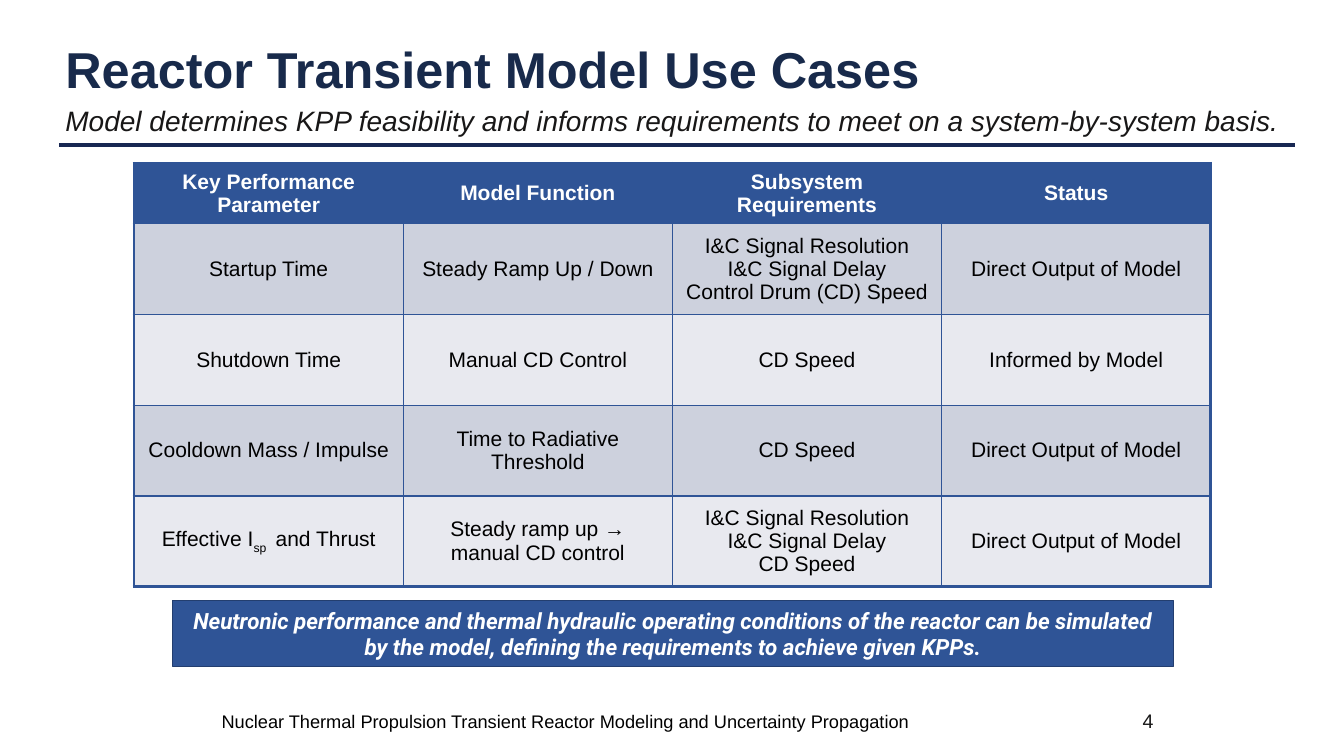
from lxml import etree
from pptx import Presentation
from pptx import util as u
from pptx.dml.color import RGBColor
from pptx.enum import shapes, text
from pptx.oxml import ns, parse_xml

PX = 9144  # EMU in one px, 100 px to the inch
NAVY, TITLE_NAVY, INK = "182752", "182A4B", "181717"
BLUE, BLUE_EDGE = "2F5496", "233E6F"
BANDS = ["CDD1DD", "E8E9EF"]
WHITE, BLACK = "FFFFFF", "000000"
LEFT, CENTER, RIGHT = text.PP_ALIGN.LEFT, text.PP_ALIGN.CENTER, text.PP_ALIGN.RIGHT
TOP, MIDDLE = text.MSO_ANCHOR.TOP, text.MSO_ANCHOR.MIDDLE
THIN, THICK = 1, 2.25

HEADINGS = ["Key Performance Parameter", "Model Function",
            "Subsystem Requirements", "Status"]
# A line is a string, or a list of (words, baseline shift) parts.
USE_CASES = [
    [["Startup Time"], ["Steady Ramp Up / Down"],
     ["I&C Signal Resolution", "I&C Signal Delay", "Control Drum (CD) Speed"],
     ["Direct Output of Model"]],
    [["Shutdown Time"], ["Manual CD Control"], ["CD Speed"], ["Informed by Model"]],
    [["Cooldown Mass / Impulse"], ["Time to Radiative", "Threshold"],
     ["CD Speed"], ["Direct Output of Model"]],
    [[[("Effective I", 0), ("sp ", -25), (" and Thrust", 0)]],
     ["Steady ramp up → manual CD control"],
     ["I&C Signal Resolution", "I&C Signal Delay", "CD Speed"],
     ["Direct Output of Model"]],
]


def px(*lengths):
    return [u.Emu(length * PX) for length in lengths]


def color(hex_code):
    return RGBColor.from_string(hex_code)


def write(frame, lines, font, ink, align=LEFT, spacing=None):
    """Fill a text frame with one paragraph for each line."""
    for index, line in enumerate(lines):
        paragraph = frame.paragraphs[0] if index == 0 else frame.add_paragraph()
        paragraph.alignment = align
        if spacing:
            paragraph.line_spacing = spacing
        parts = [(line, 0)] if isinstance(line, str) else line
        for words, shift in parts:
            run = paragraph.add_run()
            run.text = words
            for key, value in font.items():
                setattr(run.font, key, value)
            run.font.color.rgb = color(ink)
            if shift:
                run.font._element.set("baseline", str(shift * 1000))


def add_label(slide, box, words, font, ink, align=LEFT, anchor=MIDDLE, spacing=None):
    frame = slide.shapes.add_textbox(*px(*box)).text_frame
    frame.word_wrap = True
    frame.vertical_anchor = anchor
    write(frame, [words], font, ink, align, spacing)


def add_rule(slide, start, end, ink, weight):
    rule = slide.shapes.add_connector(
        shapes.MSO_CONNECTOR.STRAIGHT, *px(*start, *end))
    rule.line.color.rgb = color(ink)
    rule.line.width = u.Pt(weight)
    etree.SubElement(rule._element.spPr, ns.qn("a:effectLst"))


def add_banner(slide, box, words, font):
    banner = slide.shapes.add_shape(shapes.MSO_SHAPE.RECTANGLE, *px(*box))
    banner.shadow.inherit = False
    banner.fill.solid()
    banner.fill.fore_color.rgb = color(BLUE)
    banner.line.color.rgb = color(BLUE_EDGE)
    banner.line.width = u.Pt(1)
    banner.text_frame.word_wrap = True
    banner.text_frame.vertical_anchor = MIDDLE
    write(banner.text_frame, [words], font, WHITE, CENTER)


def set_borders(cell, weights):
    """Draw the left, right, top and bottom edges, in that order."""
    properties = cell._tc.get_or_add_tcPr()
    for index, (side, weight) in enumerate(zip("LRTB", weights)):
        properties.insert(index, parse_xml(
            f'<a:ln{side} {ns.nsdecls("a")} w="{u.Pt(weight)}">'
            f'<a:solidFill><a:srgbClr val="{BLUE}"/></a:solidFill></a:ln{side}>'))


def add_use_case_table(slide, box, heading_height, row_height):
    rows = [[[heading] for heading in HEADINGS]] + USE_CASES
    last_row, last_column = len(rows) - 1, len(HEADINGS) - 1
    table = slide.shapes.add_table(len(rows), len(HEADINGS), *px(*box)).table
    for r, row in enumerate(rows):
        is_heading = r == 0
        table.rows[r].height = px(heading_height if is_heading else row_height)[0]
        for c, lines in enumerate(row):
            cell = table.cell(r, c)
            cell.vertical_anchor = MIDDLE
            cell.fill.solid()
            cell.fill.fore_color.rgb = color(BLUE if is_heading else BANDS[(r - 1) % 2])
            outer = (c == 0, c == last_column, r == 0, r == last_row)
            set_borders(cell, [THICK if edge else THIN for edge in outer])
            font = {"name": "Arial", "size": u.Pt(15), "bold": is_heading}
            write(cell.text_frame, lines, font, WHITE if is_heading else BLACK, CENTER)


def main():
    deck = Presentation()
    deck.slide_width, deck.slide_height = px(1333, 750)
    slide = deck.slides.add_slide(deck.slide_layouts[6])

    add_label(slide, (210, 696, 846, 40),
              "Nuclear Thermal Propulsion Transient Reactor Modeling "
              "and Uncertainty Propagation",
              {"name": "Arial", "size": u.Pt(13)}, BLACK)
    add_label(slide, (854, 695, 300, 40), "4",
              {"name": "Arial", "size": u.Pt(14)}, INK, RIGHT)
    add_rule(slide, (59, 144), (1284, 144), NAVY, 3)
    add_label(slide, (55, 40, 1226, 62), "Reactor Transient Model Use Cases",
              {"name": "Arial", "size": u.Pt(36), "bold": True},
              TITLE_NAVY, spacing=0.95)
    add_label(slide, (55, 102, 1226, 39),
              "Model determines KPP feasibility and informs requirements "
              "to meet on a system-by-system basis.",
              {"name": "Arial", "size": u.Pt(20), "italic": True},
              INK, anchor=TOP, spacing=0.9)
    add_use_case_table(slide, (133, 162, 1068, 416), 56, 90)
    add_banner(slide, (171, 596, 993, 65),
               "Neutronic performance and thermal hydraulic operating conditions "
               "of the reactor can be simulated by the model, defining the "
               "requirements to achieve given KPPs.",
               {"name": "Roboto", "size": u.Pt(16), "bold": True, "italic": True})
    deck.save("out.pptx")


if __name__ == "__main__":
    main()
